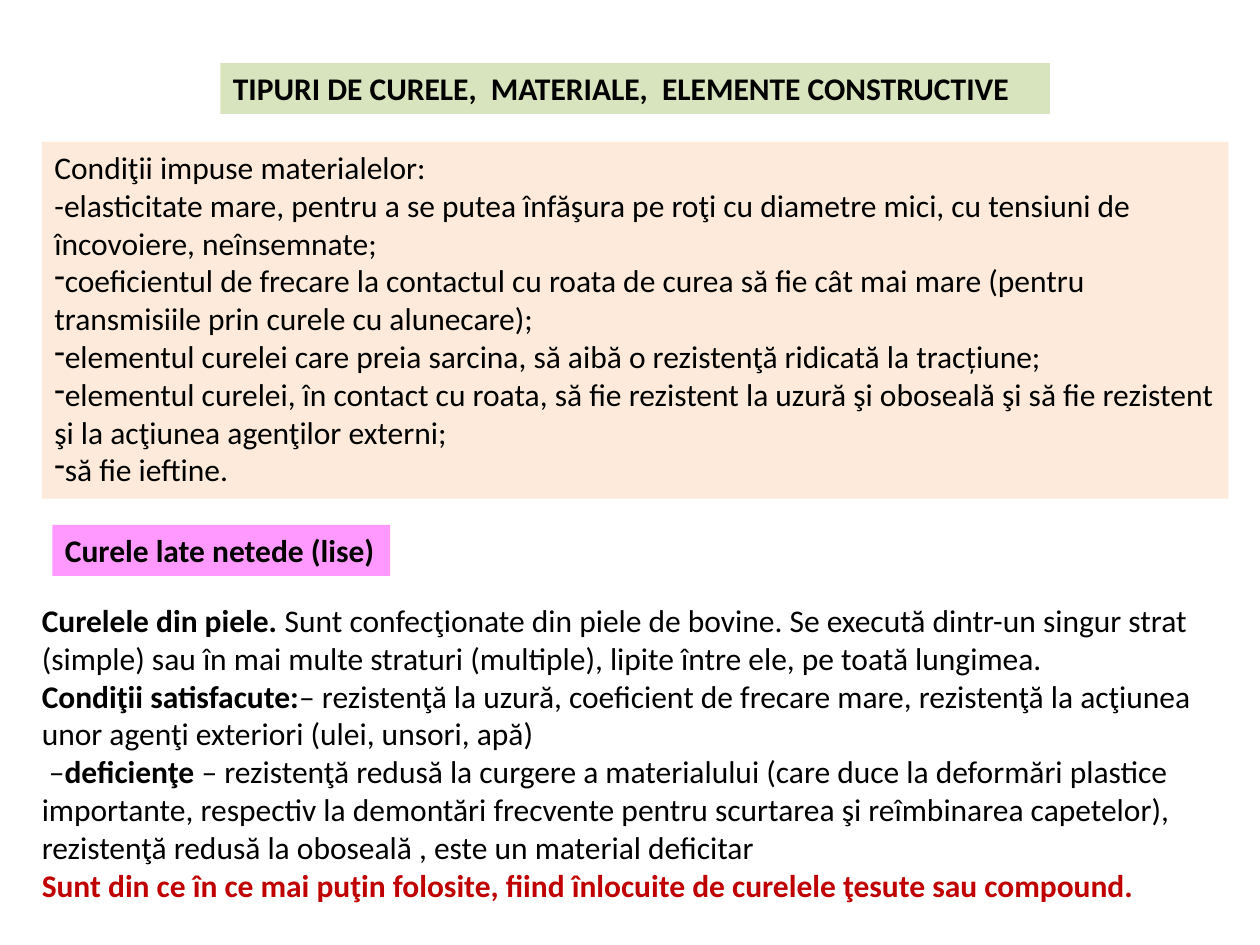
from dataclasses import dataclass

from lxml.etree import SubElement
from pptx import Presentation
from pptx.dml.color import RGBColor as Rgb
from pptx.enum.text import MSO_ANCHOR as Anchor, MSO_AUTO_SIZE as AutoSize, PP_ALIGN as Align
from pptx.oxml.ns import qn
from pptx.util import Inches, Pt


@dataclass(frozen=True)
class Theme:
    font: str = "Calibri"
    size: int = 18
    ink: str = "000000"
    warning: str = "C00000"
    title: str = "D7E4BD"
    conditions: str = "FDEADA"
    subtitle: str = "FF99FF"


THEME = Theme()
UNITS_PER_INCH = 12


@dataclass(frozen=True)
class Run:
    text: str
    bold: bool = False
    color: str = THEME.ink


@dataclass(frozen=True)
class Line:
    runs: tuple
    dashed: bool = False


def plain(text, dashed=False):
    return Line((Run(text),), dashed)


def strong(text, color=THEME.ink):
    return Line((Run(text, True, color),))


TITLE = [strong("TIPURI DE CURELE,  MATERIALE,  ELEMENTE CONSTRUCTIVE")]
SUBTITLE = [strong("Curele late netede (lise)")]
CONDITIONS = [
    plain("Condiţii impuse materialelor:"),
    plain("-elasticitate mare, pentru a se putea înfăşura pe roţi cu diametre mici, "
          "cu tensiuni de încovoiere, neînsemnate;"),
    plain("coeficientul de frecare la contactul cu roata de curea să fie cât mai mare "
          "(pentru transmisiile prin curele cu alunecare);", dashed=True),
    plain("elementul curelei care preia sarcina, să aibă o rezistenţă ridicată "
          "la tracțiune;", dashed=True),
    plain("elementul curelei, în contact cu roata, să fie rezistent la uzură şi oboseală "
          "şi să fie rezistent şi la acţiunea agenţilor externi;", dashed=True),
    plain("să fie ieftine.", dashed=True),
]
LEATHER_BELTS = [
    Line((
        Run("Curelele din piele. ", True),
        Run("Sunt confecţionate din piele de bovine. Se execută dintr-un singur strat "
            "(simple) sau în mai multe straturi (multiple), lipite între ele, "
            "pe toată lungimea."),
    )),
    Line((
        Run("Condiţii satisfacute:", True),
        Run("– rezistenţă la uzură, coeficient de frecare mare, rezistenţă la acţiunea "
            "unor agenţi exteriori (ulei, unsori, apă)"),
    )),
    Line((
        Run(" –"),
        Run("deficienţe ", True),
        Run("– rezistenţă redusă la curgere a materialului (care duce la deformări plastice "
            "importante, respectiv la demontări frecvente pentru scurtarea şi reîmbinarea "
            "capetelor), rezistenţă redusă la oboseală , este un material deficitar"),
    )),
    strong("Sunt din ce în ce mai puţin folosite, fiind înlocuite de curelele ţesute "
           "sau compound.", THEME.warning),
]


def add_dash(paragraph):
    properties = paragraph._p.get_or_add_pPr()
    SubElement(properties, qn("a:buFontTx"))
    SubElement(properties, qn("a:buChar"), char="-")


def write_lines(frame, lines):
    for index, line in enumerate(lines):
        paragraph = frame.add_paragraph() if index else frame.paragraphs[0]
        paragraph.alignment = Align.LEFT
        if line.dashed:
            add_dash(paragraph)
        for piece in line.runs:
            run = paragraph.add_run()
            run.text = piece.text
            run.font.name = THEME.font
            run.font.size = Pt(THEME.size)
            run.font.bold = piece.bold
            run.font.color.rgb = Rgb.from_string(piece.color)


def add_text_panel(slide, cells, lines, fill=None, wrap=True):
    panel = slide.shapes.add_textbox(*(Inches(cell / UNITS_PER_INCH) for cell in cells))
    if fill:
        panel.fill.solid()
        panel.fill.fore_color.rgb = Rgb.from_string(fill)
    frame = panel.text_frame
    frame.word_wrap = wrap
    frame.auto_size = AutoSize.SHAPE_TO_FIT_TEXT
    frame.vertical_anchor = Anchor.TOP
    write_lines(frame, lines)


def main():
    deck = Presentation()
    deck.slide_width, deck.slide_height = Inches(10), Inches(7.5)
    slide = deck.slides.add_slide(deck.slide_layouts[6])
    add_text_panel(slide, (21, 6, 79, 4.85), TITLE, THEME.title)
    add_text_panel(slide, (4, 13.5, 113, 34), CONDITIONS, THEME.conditions)
    add_text_panel(slide, (5, 50, 32.15, 4.85), SUBTITLE, THEME.subtitle, wrap=False)
    add_text_panel(slide, (2.8, 56.65, 115, 30.25), LEATHER_BELTS)
    deck.save("out.pptx")


if __name__ == "__main__":
    main()
